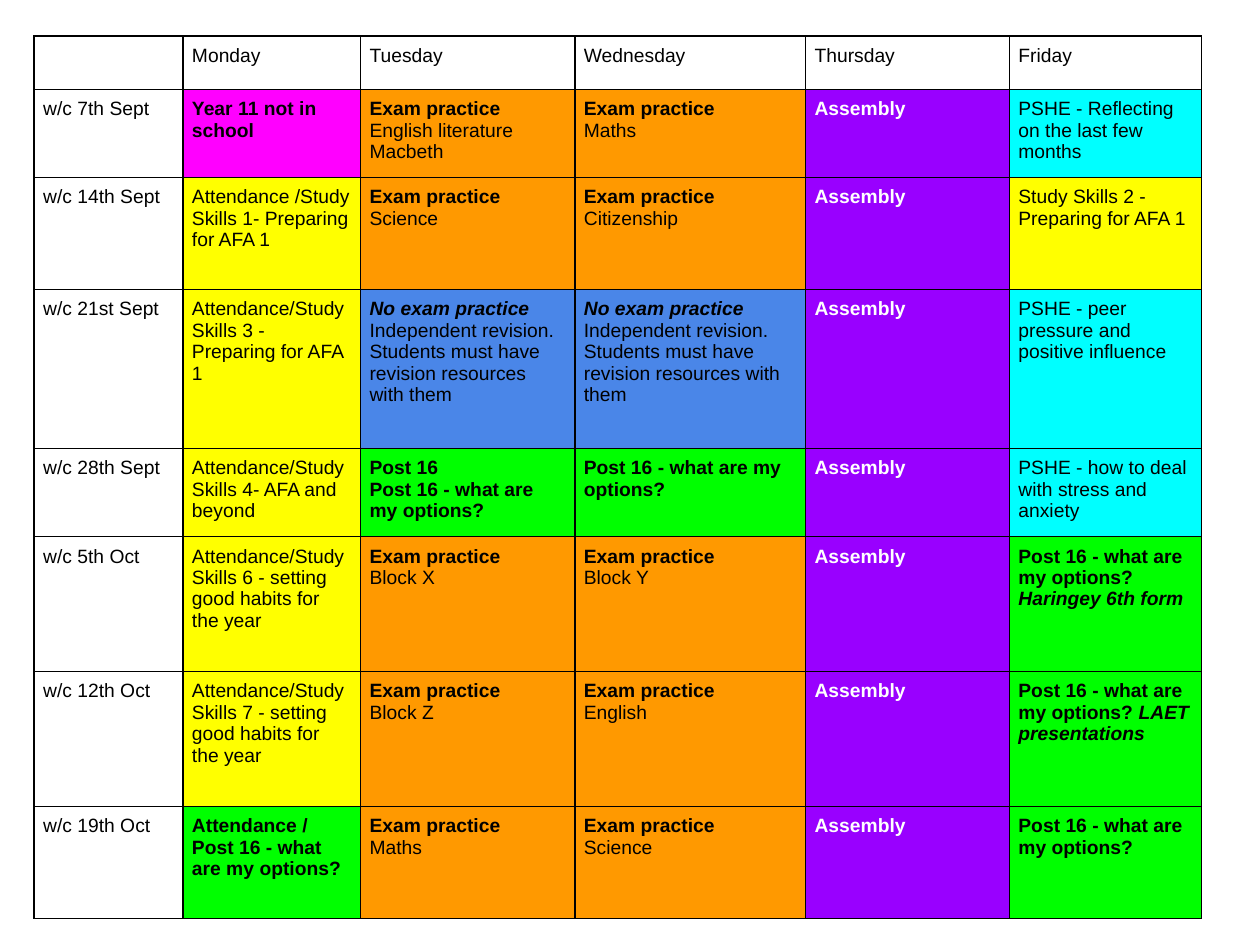
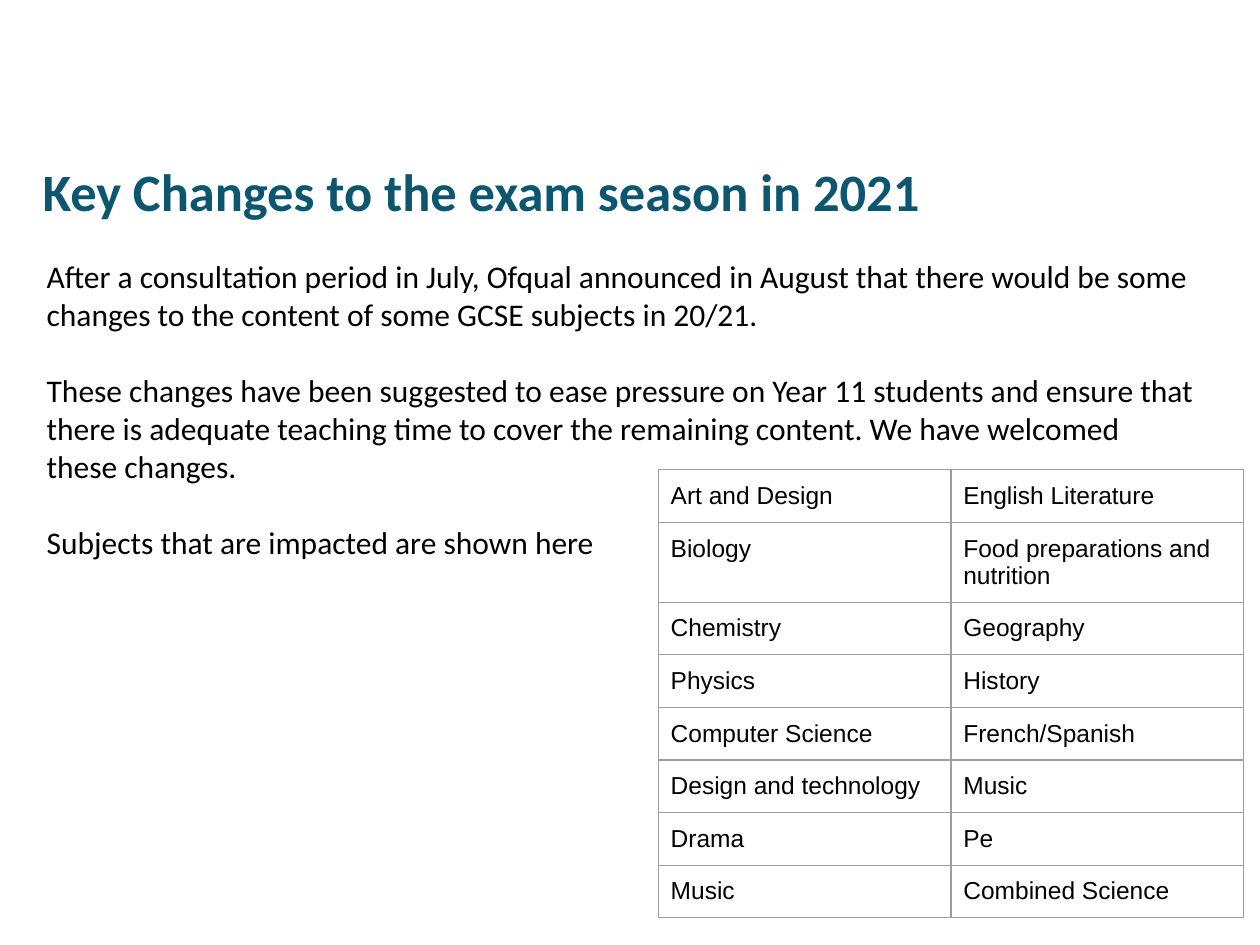
from dataclasses import dataclass

from lxml.etree import SubElement
from pptx import Presentation
from pptx.dml.color import RGBColor
from pptx.enum.text import MSO_ANCHOR, MSO_AUTO_SIZE, PP_ALIGN
from pptx.oxml import parse_xml
from pptx.oxml.ns import nsdecls, qn
from pptx.util import Cm, Pt

COLORS = {
    "text": "000000",
    "light": "FFFFFF",
    "title": "0C566F",
    "grid": "9E9E9E",
    "absent": "FF00FF",
    "exam": "FF9900",
    "assembly": "9900FF",
    "pshe": "00FFFF",
    "study": "FFFF00",
    "revision": "4A86E8",
    "post16": "00FF00",
}
NO_TABLE_STYLE = "{2D5ABB26-0587-4C30-8999-92F81FD0307C}"
OPTIONS = "Post 16 - what are my options?"


@dataclass(frozen=True)
class Run:
    text: str
    bold: bool = False
    italic: bool = False


@dataclass(frozen=True)
class Slot:
    """A table cell: its paragraphs of runs and the activity that colours it."""
    paragraphs: tuple[tuple[Run, ...], ...]
    kind: str = ""


@dataclass(frozen=True)
class TableStyle:
    size: int
    inset: float
    border: str
    border_width: float


TIMETABLE = TableStyle(11, 0.18, "text", 1)
SUBJECTS = TableStyle(14, 0.25, "grid", 0.75)


# Kinds of cell
def plain(text: str, kind: str = "") -> Slot:
    return Slot(((Run(text),),), kind)


def strong(kind: str, *lines: str) -> Slot:
    return Slot(tuple((Run(line, bold=True),) for line in lines), kind)


def exam(subject: str) -> Slot:
    return Slot(((Run("Exam practice", bold=True),), (Run(subject),)), "exam")


def revision() -> Slot:
    return Slot((
        (Run("No exam practice", bold=True, italic=True),),
        (Run("Independent revision. Students must have revision resources with them"),),
    ), "revision")


def visit(provider: str) -> Slot:
    runs = Run(OPTIONS + " ", bold=True), Run(provider, bold=True, italic=True)
    return Slot((runs,), "post16")


# Each week: name, Monday, Tuesday, Wednesday, Friday
WEEKS = [
    ("7th Sept", strong("absent", "Year 11 not in school"),
     exam("English literature Macbeth"), exam("Maths"),
     plain("PSHE - Reflecting on the last few months", "pshe")),
    ("14th Sept", plain("Attendance /Study Skills 1- Preparing for AFA 1", "study"),
     exam("Science"), exam("Citizenship"),
     plain("Study Skills 2 - Preparing for AFA 1", "study")),
    ("21st Sept", plain("Attendance/Study Skills 3 - Preparing for AFA 1", "study"),
     revision(), revision(),
     plain("PSHE - peer pressure and positive influence", "pshe")),
    ("28th Sept", plain("Attendance/Study Skills 4- AFA and beyond", "study"),
     strong("post16", "Post 16", OPTIONS), strong("post16", OPTIONS),
     plain("PSHE - how to deal with stress and anxiety", "pshe")),
    ("5th Oct", plain("Attendance/Study Skills 6 - setting good habits for the year", "study"),
     exam("Block X"), exam("Block Y"), visit("Haringey 6th form")),
    ("12th Oct", plain("Attendance/Study Skills 7 - setting good habits for the year", "study"),
     exam("Block Z"), exam("English"), visit("LAET presentations")),
    ("19th Oct", strong("post16", "Attendance / " + OPTIONS),
     exam("Maths"), exam("Science"), strong("post16", OPTIONS)),
]
DAYS = ["", "Monday", "Tuesday", "Wednesday", "Thursday", "Friday"]

CHANGED_SUBJECTS = [
    ("Art and Design", "English Literature"),
    ("Biology", "Food preparations and nutrition"),
    ("Chemistry", "Geography"),
    ("Physics", "History"),
    ("Computer Science", "French/Spanish"),
    ("Design and technology", "Music"),
    ("Drama", "Pe"),
    ("Music", "Combined Science"),
]
CHANGES = [
    "After a consultation period in July, Ofqual announced in August that there would be "
    "some changes to the content of some GCSE subjects in 20/21.",
    "These changes have been suggested to ease pressure on Year 11 students and ensure that "
    "there is adequate teaching time to cover the remaining content. We have welcomed these "
    "changes.",
    "Subjects that are impacted are shown here",
]


# Shared drawing
def rgb(name: str) -> RGBColor:
    return RGBColor.from_string(COLORS[name])


def set_font(p, name: str, size: int, color: str, bold: bool = False) -> None:
    p.font.name = name
    p.font.size = Pt(size)
    p.font.bold = bold
    p.font.color.rgb = rgb(color)


def add_borders(cell, style: TableStyle) -> None:
    tc_pr = cell._tc.get_or_add_tcPr()
    for i, side in enumerate("LRTB"):
        tc_pr.insert(i, parse_xml(
            f'<a:ln{side} {nsdecls("a")} w="{Pt(style.border_width)}"><a:solidFill>'
            f'<a:srgbClr val="{COLORS[style.border]}"/></a:solidFill></a:ln{side}>'))


def fill_cell(cell, slot: Slot, style: TableStyle) -> None:
    cell.margin_left = cell.margin_right = Cm(style.inset)
    cell.margin_top = cell.margin_bottom = Cm(style.inset)
    if slot.kind:
        cell.fill.solid()
        cell.fill.fore_color.rgb = rgb(slot.kind)
    else:
        cell.fill.background()
    add_borders(cell, style)
    tf = cell.text_frame
    for i, runs in enumerate(slot.paragraphs):
        p = tf.add_paragraph() if i else tf.paragraphs[0]
        set_font(p, "Arial", style.size, "light" if slot.kind == "assembly" else "text")
        for run in runs:
            if run.text:
                r = p.add_run()
                r.text = run.text
                r.font.bold = run.bold
                r.font.italic = run.italic


def add_grid(slide, left: float, top: float, widths: list[float], heights: list[float],
             rows: list[list[Slot]], style: TableStyle) -> None:
    frame = slide.shapes.add_table(len(heights), len(widths), Cm(left), Cm(top),
                                   Cm(sum(widths)), Cm(sum(heights)))
    table = frame.table
    table.first_row = table.horz_banding = False
    frame._element.find(".//" + qn("a:tableStyleId")).text = NO_TABLE_STYLE
    for column, width in zip(table.columns, widths):
        column.width = Cm(width)
    for row, height, slots in zip(table.rows, heights, rows):
        row.height = Cm(height)
        for cell, slot in zip(row.cells, slots):
            fill_cell(cell, slot, style)


def place(sp, left: float, top: float, width: float, height: float) -> None:
    sp.left, sp.top, sp.width, sp.height = Cm(left), Cm(top), Cm(width), Cm(height)


# Slides
def add_timetable(prs) -> None:
    slide = prs.slides.add_slide(prs.slide_layouts[6])
    assembly = strong("assembly", "Assembly")
    rows = [[plain(day) for day in DAYS]]
    for week, monday, tuesday, wednesday, friday in WEEKS:
        rows.append([plain(f"w/c {week}"), monday, tuesday, wednesday, assembly, friday])
    add_grid(slide, 0.69, 0.73, [3, 3.58, 4.32, 4.65, 4.11, 3.87],
             [1.07, 1.78, 2.26, 3.2, 1.78, 2.72, 2.72, 2.26], rows, TIMETABLE)


def add_key_changes(prs) -> None:
    slide = prs.slides.add_slide(prs.slide_layouts[1])
    title, body = slide.placeholders

    # Title
    place(title, 0.86, 1.85, 23.67, 2.62)
    tf = title.text_frame
    tf.text = "Key Changes to the exam season in 2021"
    tf.auto_size = MSO_AUTO_SIZE.NONE
    tf.vertical_anchor = MSO_ANCHOR.BOTTOM
    tf.margin_left = tf.margin_bottom = 0
    tf.margin_top = tf.margin_right = Cm(0.25)
    p = tf.paragraphs[0]
    p.alignment = PP_ALIGN.LEFT
    set_font(p, "Calibri", 30, "title", bold=True)

    # Explanation
    place(body, 0.69, 4.93, 23.67, 11.66)
    tf = body.text_frame
    tf.auto_size = MSO_AUTO_SIZE.NONE
    tf.margin_left = tf.margin_right = tf.margin_top = tf.margin_bottom = Cm(0.25)
    for i, text in enumerate(CHANGES):
        p = tf.add_paragraph() if i else tf.paragraphs[0]
        p.text = text
        p_pr = p._p.get_or_add_pPr()
        p_pr.set("marL", "0")
        p_pr.set("indent", "0")
        SubElement(p_pr, qn("a:buNone"))
        p.space_before = Pt(22 if i else 0)
        set_font(p, "Calibri", 18, "text")

    # Subjects
    rows = [[plain(subject) for subject in pair] for pair in CHANGED_SUBJECTS]
    heights = [1.61 if i == 1 else 1.06 for i in range(len(rows))]
    add_grid(slide, 13.27, 9.47, [5.9, 5.9], heights, rows, SUBJECTS)


def main() -> None:
    prs = Presentation()
    prs.slide_width, prs.slide_height = Cm(25.4), Cm(19.05)
    add_timetable(prs)
    add_key_changes(prs)
    prs.save("out.pptx")


if __name__ == "__main__":
    main()
